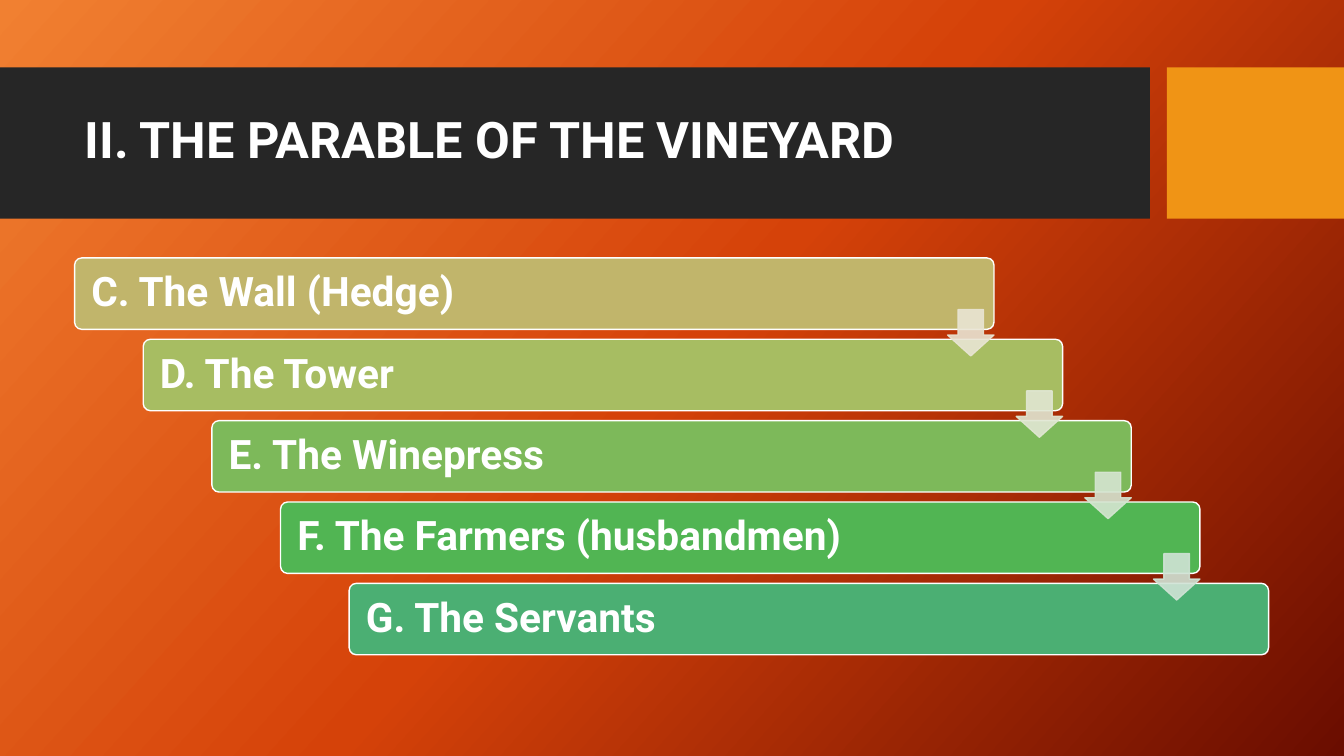
from copy import deepcopy
from dataclasses import dataclass

from lxml import etree
from pptx import Presentation
from pptx.dml.color import RGBColor
from pptx.enum import shapes, text
from pptx.oxml import ns
from pptx.util import Cm, Pt

FONT = "Roboto"
WHITE = RGBColor(0xFF, 0xFF, 0xFF)
CHARCOAL = RGBColor(0x26, 0x26, 0x26)
AMBER = RGBColor(0xF0, 0x94, 0x15)
BACKDROP = (
    (0.0, RGBColor(0xF1, 0x80, 0x31)),
    (0.5, RGBColor(0xD5, 0x42, 0x09)),
    (1.0, RGBColor(0x6A, 0x0D, 0x00)),
)

# Staircase measures in centimetres
STEP_LEFT, STEP_TOP = 1.88, 6.5
STEP_WIDTH, STEP_HEIGHT = 23.17, 1.8
SHIFT_RIGHT, SHIFT_DOWN = 1.73, 2.05
ARROW_SIZE, ARROW_RISE = 1.17, 0.75


@dataclass(frozen=True)
class Step:
    label: str
    color: RGBColor
    arrow_color: RGBColor | None = None


STEPS = (
    Step("C. The Wall (Hedge)", RGBColor(0xC1, 0xB5, 0x6B), RGBColor(0xE9, 0xE5, 0xD4)),
    Step("D. The Tower", RGBColor(0xA7, 0xBD, 0x62), RGBColor(0xE1, 0xE7, 0xD3)),
    Step("E. The Winepress", RGBColor(0x7D, 0xB9, 0x5A), RGBColor(0xD5, 0xE5, 0xD1)),
    Step("F. The Farmers (husbandmen)", RGBColor(0x51, 0xB5, 0x53), RGBColor(0xD0, 0xE3, 0xD5)),
    Step("G. The Servants", RGBColor(0x4B, 0xAF, 0x73)),
)


def paint_background(slide) -> None:
    fill = slide.background.fill
    fill.gradient()
    fill.gradient_angle = 318
    stop_list = next(slide.element.iter(ns.qn("a:gsLst")))
    stop_list.append(deepcopy(stop_list[0]))
    for stop, (position, color) in zip(fill.gradient_stops, BACKDROP):
        stop.position = position
        stop.color.rgb = color


def add_block(slide, kind, left: float, top: float, width: float, height: float,
              color: RGBColor, line_color: RGBColor | None = None):
    block = slide.shapes.add_shape(kind, Cm(left), Cm(top), Cm(width), Cm(height))
    block.shadow.inherit = False
    block.fill.solid()
    block.fill.fore_color.rgb = color
    if line_color is None:
        block.line.fill.background()
    else:
        block.line.color.rgb = line_color
        block.line.width = Pt(1)
    return block


def write_line(frame, wording: str, size: int) -> None:
    frame.word_wrap = True
    frame.auto_size = text.MSO_AUTO_SIZE.NONE
    frame.vertical_anchor = text.MSO_ANCHOR.MIDDLE
    frame.text = wording
    line = frame.paragraphs[0]
    line.alignment = text.PP_ALIGN.LEFT
    line.line_spacing = 0.9
    line.font.name = FONT
    line.font.size = Pt(size)
    line.font.bold = True
    line.font.color.rgb = WHITE


def add_title(slide, wording: str) -> None:
    title = slide.shapes.title
    title.left, title.top, title.width, title.height = Cm(1.88), Cm(2.08), Cm(26.7), Cm(3)
    write_line(title.text_frame, wording, 36)
    title.text_frame.paragraphs[0].space_after = Pt(6)
    # Bring the title in front of its band
    title.element.getparent().append(title.element)


def add_step(slide, index: int, step: Step) -> None:
    bar = add_block(slide, shapes.MSO_SHAPE.ROUNDED_RECTANGLE,
                    STEP_LEFT + index * SHIFT_RIGHT, STEP_TOP + index * SHIFT_DOWN,
                    STEP_WIDTH, STEP_HEIGHT, step.color, WHITE)
    bar.adjustments[0] = 0.1
    bar.text_frame.margin_left = Cm(0.37)
    write_line(bar.text_frame, step.label, 29)


def add_arrow(slide, index: int, color: RGBColor) -> None:
    left = STEP_LEFT + index * SHIFT_RIGHT + STEP_WIDTH - ARROW_SIZE
    top = STEP_TOP + (index + 1) * SHIFT_DOWN - ARROW_RISE
    arrow = add_block(slide, shapes.MSO_SHAPE.DOWN_ARROW, left, top,
                      ARROW_SIZE, ARROW_SIZE, color, color)
    arrow.adjustments[0] = 0.55
    arrow.adjustments[1] = 0.45
    # Fill and outline are both 90 % opaque
    for tint in arrow.element.spPr.iter(ns.qn("a:srgbClr")):
        etree.SubElement(tint, ns.qn("a:alpha"), val="90000")


def main() -> None:
    deck = Presentation()
    deck.slide_width, deck.slide_height = Cm(33.87), Cm(19.05)
    slide = deck.slides.add_slide(deck.slide_layouts[5])
    paint_background(slide)

    # Title band
    add_block(slide, shapes.MSO_SHAPE.RECTANGLE, 0, 1.7, 28.98, 3.81, CHARCOAL)
    add_block(slide, shapes.MSO_SHAPE.RECTANGLE, 29.41, 1.7, 4.46, 3.81, AMBER)
    add_title(slide, "II. THE PARABLE OF THE VINEYARD")

    # Staircase, with the arrows in front of the bars
    for index, step in enumerate(STEPS):
        add_step(slide, index, step)
    for index, step in enumerate(STEPS):
        if step.arrow_color is not None:
            add_arrow(slide, index, step.arrow_color)

    deck.save("out.pptx")


if __name__ == "__main__":
    main()
